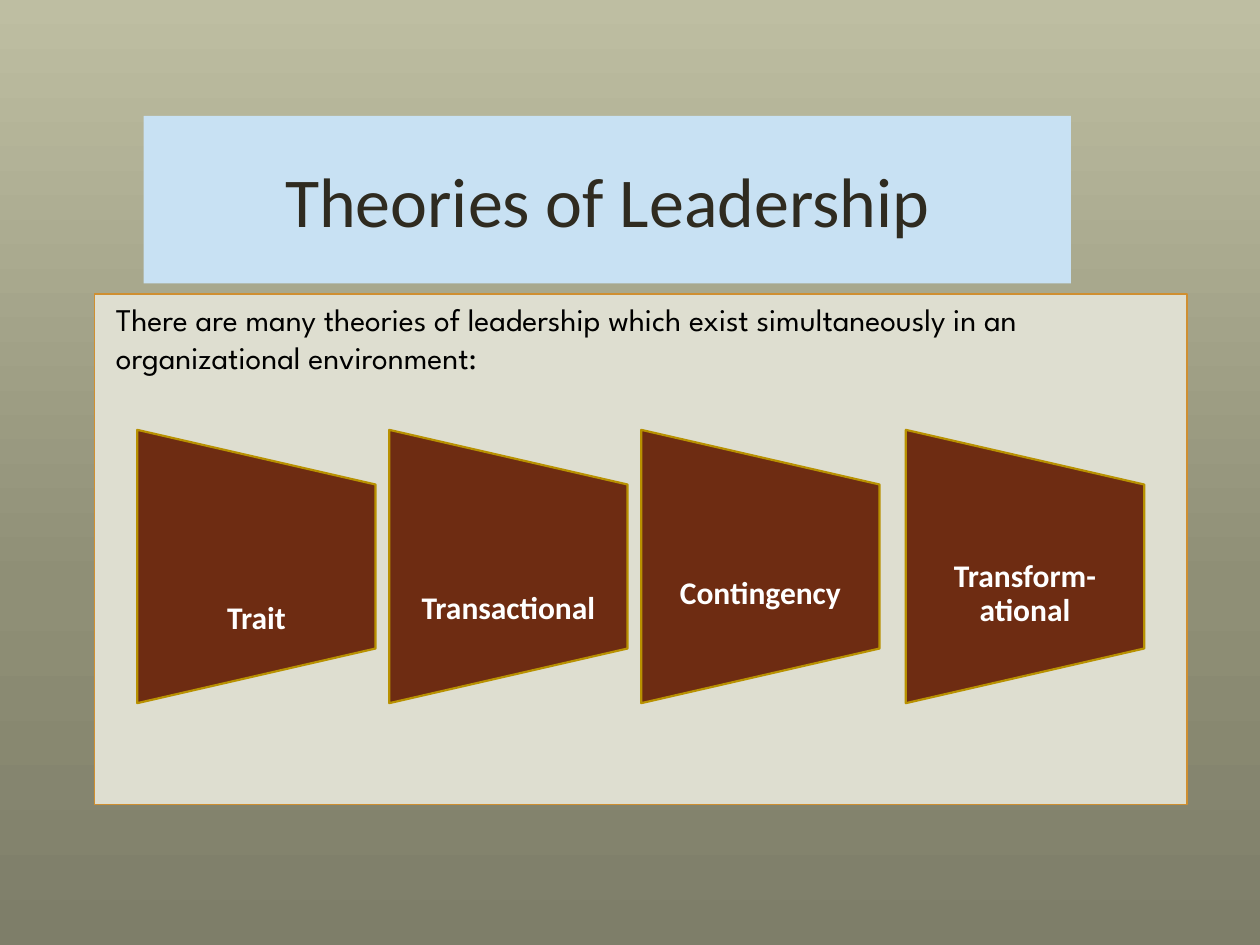
"""Build a slide that names four theories of leadership."""
from copy import deepcopy

from pptx import Presentation
from pptx.dml.color import RGBColor
from pptx.enum.shapes import MSO_SHAPE
from pptx.enum.text import MSO_ANCHOR, PP_ALIGN
from pptx.oxml.ns import qn
from pptx.util import Pt

TITLE = "Theories of Leadership"
INTRODUCTION = ("There are many theories of leadership which exist "
                "simultaneously in an organizational environment:")
THEORIES = [
    {"name": "Trait", "left": 68.4, "text_drop": 60},
    {"name": "Transactional", "left": 212.4, "text_drop": 48},
    {"name": "Contingency", "left": 356.4, "text_drop": 31},
    {"name": "Transform-ational", "left": 507.6, "text_drop": 31},
]
BACKGROUND = [(0, "BEBEA2"), (0.62, "8F8F76"), (1, "7E7E69")]
COLORS = {
    "title_fill": "C8E1F3", "title_text": "2F2B20",
    "panel_fill": "DEDED0", "panel_line": "CF8F31", "panel_text": "000000",
    "theory_fill": "6E2C12", "theory_line": "B89101", "theory_text": "FFFFFF",
}
TITLE_BOX = (82, 66.2, 530, 95.8)
PANEL_BOX = (54, 168, 624.4, 291.6)
THEORY_TOP, THEORY_WIDTH, THEORY_HEIGHT = 255.6, 156.2, 136.2
TEXT_TOP, TEXT_WIDTH, TEXT_HEIGHT = 277.2, 136.2, 93.6


def color(name):
    return RGBColor.from_string(COLORS[name])


def paint_background(slide):
    fill = slide.background.fill
    fill.gradient()
    fill.gradient_angle = 270
    stop_list = slide.element.find(".//" + qn("a:gsLst"))
    stop_list.insert(1, deepcopy(stop_list[0]))
    for stop, (position, value) in zip(fill.gradient_stops, BACKGROUND):
        stop.position = position
        stop.color.rgb = RGBColor.from_string(value)


def add_shape(slide, kind, box, fill, line=None, line_width=0):
    shape = slide.shapes.add_shape(kind, *(Pt(length) for length in box))
    shape.shadow.inherit = False
    shape.fill.solid()
    shape.fill.fore_color.rgb = color(fill)
    if line:
        shape.line.color.rgb = color(line)
        shape.line.width = Pt(line_width)
    else:
        shape.line.fill.background()
    return shape


def write(shape, text, font, size, text_color, anchor, alignment, bold=False):
    frame = shape.text_frame
    frame.word_wrap = True
    frame.vertical_anchor = anchor
    paragraph = frame.paragraphs[0]
    paragraph.text = text
    paragraph.alignment = alignment
    paragraph.font.name = font
    paragraph.font.size = Pt(size)
    paragraph.font.bold = bold
    paragraph.font.color.rgb = color(text_color)
    return paragraph


def add_theory(slide, theory):
    box = (theory["left"], THEORY_TOP, THEORY_WIDTH, THEORY_HEIGHT)
    shape = add_shape(slide, MSO_SHAPE.FLOWCHART_MANUAL_OPERATION, box,
                      "theory_fill", "theory_line", 1.25)
    shape.rotation = 270
    text_left = theory["left"] + (THEORY_WIDTH - TEXT_WIDTH) / 2
    label = slide.shapes.add_textbox(
        Pt(text_left), Pt(TEXT_TOP), Pt(TEXT_WIDTH), Pt(TEXT_HEIGHT))
    paragraph = write(label, theory["name"], "Calibri", 18, "theory_text",
                      MSO_ANCHOR.MIDDLE, PP_ALIGN.CENTER, bold=True)
    paragraph.line_spacing = 0.9
    frame = label.text_frame
    frame.margin_left = frame.margin_right = Pt(5)
    frame.margin_top, frame.margin_bottom = Pt(theory["text_drop"]), Pt(0)


def main():
    presentation = Presentation()
    presentation.slide_width, presentation.slide_height = Pt(720), Pt(540)
    slide = presentation.slides.add_slide(presentation.slide_layouts[6])
    paint_background(slide)
    title = add_shape(slide, MSO_SHAPE.RECTANGLE, TITLE_BOX, "title_fill")
    write(title, TITLE, "Calibri", 40, "title_text",
          MSO_ANCHOR.MIDDLE, PP_ALIGN.CENTER)
    panel = add_shape(slide, MSO_SHAPE.RECTANGLE, PANEL_BOX,
                      "panel_fill", "panel_line", 0.75)
    paragraph = write(panel, INTRODUCTION, "League Spartan", 18, "panel_text",
                      MSO_ANCHOR.TOP, PP_ALIGN.LEFT)
    paragraph.space_before = Pt(3.6)
    panel.text_frame.margin_left = Pt(12.2)
    for theory in THEORIES:
        add_theory(slide, theory)
    presentation.save("out.pptx")


if __name__ == "__main__":
    main()
